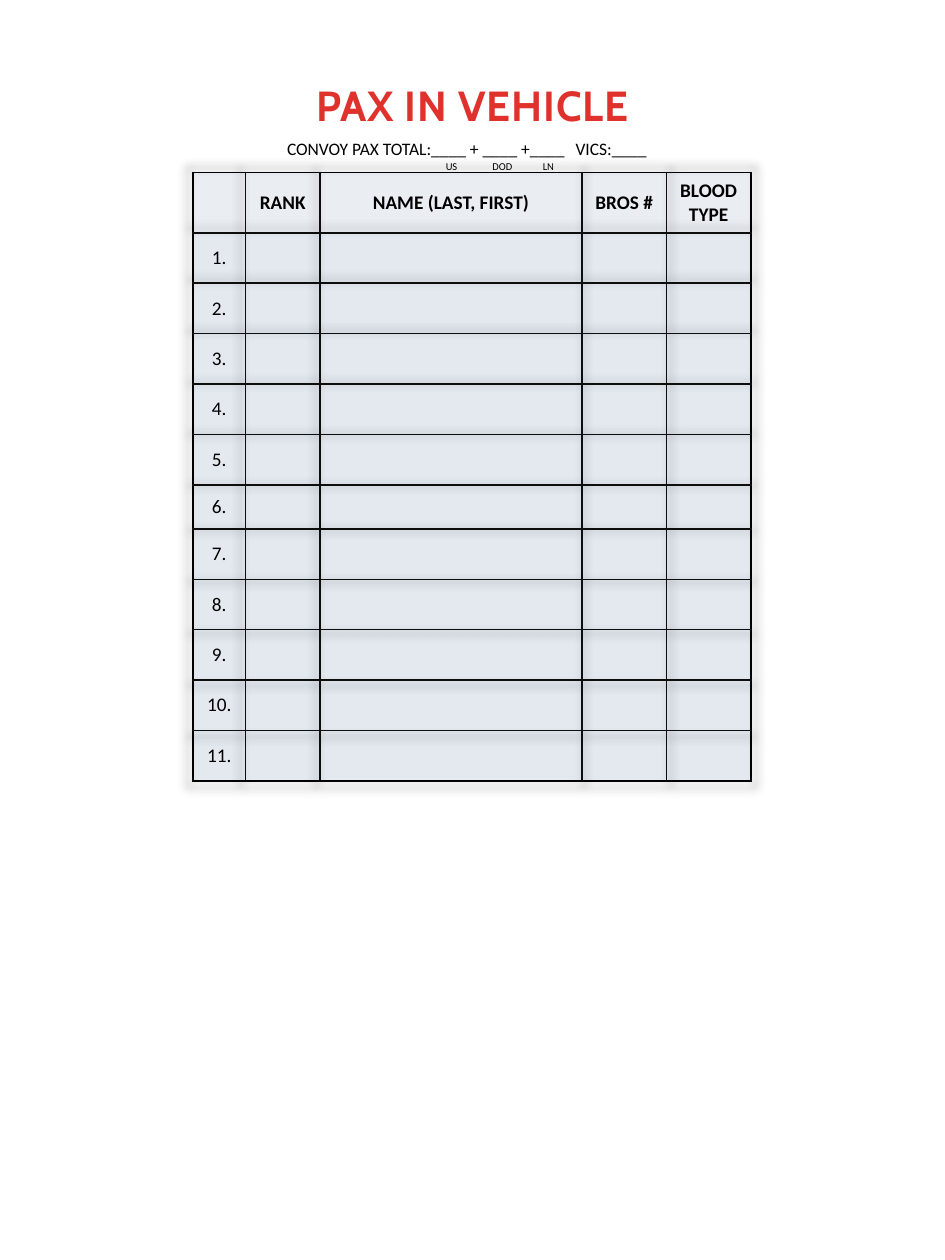
"""Build the passenger roster page."""
from lxml import etree
from pptx import Presentation, util as u
from pptx.dml.color import RGBColor
from pptx.enum import text
from pptx.oxml import ns

COLUMNS, ROWS = 75, 100
COLORS = {"red": "E0322D", "dark_red": "A2201C", "black": "000000",
          "line": "0D0D0D", "header": "8EB4E3", "body": "4F81BD"}
FORMATS = {
    "title": {"name": "Cabin", "size": u.Pt(24), "bold": True},
    "total": {"name": "Calibri", "size": u.Pt(10)},
    "label": {"name": "Calibri", "size": u.Pt(6)},
    "header": {"name": "Calibri", "size": u.Pt(11), "bold": True},
    "body": {"name": "Calibri", "size": u.Pt(11), "bold": False},
}
HEADINGS = ["", "RANK", "NAME (LAST, FIRST)", "BROS #", "BLOOD\nTYPE"]
COLUMN_WIDTHS = [4.2, 5.9, 20.8, 6.7, 6.7]
ROW_HEIGHTS = [4.7] + [4] * 5 + [3.5] + [4] * 5
NO_STYLE = "{2D5ABB26-0587-4C30-8999-92F81FD0307C}"


def assign(target, values):
    """Set every named value on the target."""
    for name, value in values.items():
        setattr(target, name, value)


def add_node(parent, tag, **attributes):
    """Append a drawing element and return it."""
    node = etree.SubElement(parent, ns.qn(f"a:{tag}"))
    for name, value in attributes.items():
        node.set(name, str(value))
    return node


def add_color(parent, color, alpha=100):
    """Append a solid fill with the given opacity in percent."""
    tint = add_node(add_node(parent, "solidFill"), "srgbClr", val=COLORS[color])
    add_node(tint, "alpha", val=alpha * 1000)


class Roster:
    """Hold the style and the current page."""

    def __init__(self, deck):
        """Start a blank page and size its grid."""
        self.page = deck.slides.add_slide(deck.slide_layouts[6])
        self.column = deck.slide_width / COLUMNS
        self.row = deck.slide_height / ROWS

    def place(self, left, top, width, height):
        """Turn grid units into lengths."""
        return [u.Emu(round(value * unit)) for value, unit in
                zip((left, top, width, height), (self.column, self.row) * 2)]

    def span(self, para, words, style, align=text.PP_ALIGN.LEFT):
        """Add one styled span to a paragraph."""
        para.alignment = align
        span = para.add_run()
        span.text = words
        assign(span.font, FORMATS[style])
        span.font.color.rgb = RGBColor.from_string(COLORS["black"])
        return span

    def box(self, *area):
        """Add a wrapping text box and return its frame."""
        frame = self.page.shapes.add_textbox(*self.place(*area)).text_frame
        assign(frame, {"word_wrap": True, "auto_size": text.MSO_AUTO_SIZE.SHAPE_TO_FIT_TEXT})
        return frame

    def title(self, words, *area):
        """Add the centred gradient title."""
        para = self.box(*area).paragraphs[0]
        span = self.span(para, words, "title", text.PP_ALIGN.CENTER)
        fill = span.font.fill
        fill.gradient()
        fill.gradient_angle = 270
        for stop, color, position in zip(fill.gradient_stops, ("red", "dark_red"), (0.25, 1)):
            stop.color.rgb = RGBColor.from_string(COLORS[color])
            stop.position = position
        span.font._element.set("spc", "50")

    def totals(self, lines, *area):
        """Add tabbed lines, each given as words, style and tab stops."""
        frame = self.box(*area)
        for index, (words, style, stops) in enumerate(lines):
            para = frame.add_paragraph() if index else frame.paragraphs[0]
            self.span(para, words, style)
            tabs = add_node(para._p.get_or_add_pPr(), "tabLst")
            for stop in stops:
                add_node(tabs, "tab", pos=round(stop * self.column), algn="l")

    def cell(self, cell, words, style, edges):
        """Fill, outline and letter one table cell."""
        assign(cell, {"vertical_anchor": text.MSO_ANCHOR.MIDDLE,
                      "margin_left": u.Inches(0.05), "margin_right": u.Inches(0.05)})
        frame = cell.text_frame
        for index, line in enumerate(words.split("\n")):
            para = frame.add_paragraph() if index else frame.paragraphs[0]
            if line:
                self.span(para, line, style, text.PP_ALIGN.CENTER)
            else:
                add_node(para._p, "endParaRPr", sz=1100)
        properties = cell._tc.get_or_add_tcPr()
        for side, outer in edges.items():
            border = add_node(properties, f"ln{side}", w=u.Pt(1))
            add_color(border, "black" if outer else "line")
        add_color(properties, style, 10)

    def table(self, left, top, widths, heights, values):
        """Add the ruled table with its soft shadow."""
        area = self.place(left, top, sum(widths), sum(heights))
        table = self.page.shapes.add_table(len(heights), len(widths), *area).table
        assign(table, {"first_row": False, "horz_banding": False})
        properties = table._tbl.tblPr
        properties.find(ns.qn("a:tableStyleId")).text = NO_STYLE
        effects = add_node(properties, "effectLst")
        properties.insert(0, effects)
        shadow = add_node(effects, "outerShdw", blurRad=u.Pt(5), sx=102000,
                          sy=102000, algn="ctr", rotWithShape=0)
        add_node(add_node(shadow, "prstClr", val="black"), "alpha", val=40000)
        for column, width in zip(table.columns, widths):
            column.width = round(width * self.column)
        for row, height in zip(table.rows, heights):
            row.height = round(height * self.row)
        for r, line in enumerate(values):
            for c, words in enumerate(line):
                edges = {"L": c == 0, "R": c == len(widths) - 1,
                         "T": r == 0, "B": r == len(heights) - 1}
                self.cell(table.cell(r, c), words, "body" if r else "header", edges)


def main():
    """Build and save the deck."""
    deck = Presentation()
    assign(deck, {"slide_width": u.Inches(7.5), "slide_height": u.Inches(10)})
    roster = Roster(deck)
    blanks = [""] * (len(HEADINGS) - 1)
    people = [[f"{number}."] + blanks for number in range(1, len(ROW_HEIGHTS))]
    roster.table(15.3, 13.7, COLUMN_WIDTHS, ROW_HEIGHTS, [HEADINGS] + people)
    roster.title("PAX IN VEHICLE", 12.5, 5.8, 50, 5)
    roster.totals([("CONVOY PAX TOTAL:____ + ____ +____\tVICS:____", "total", [22.9]),
                   ("\tUS\tDOD\tLN", "label", [12.6, 16.3, 20.3])],
                  21.8, 10.5, 31.4, 3.7)
    deck.save("out.pptx")


if __name__ == "__main__":
    main()
